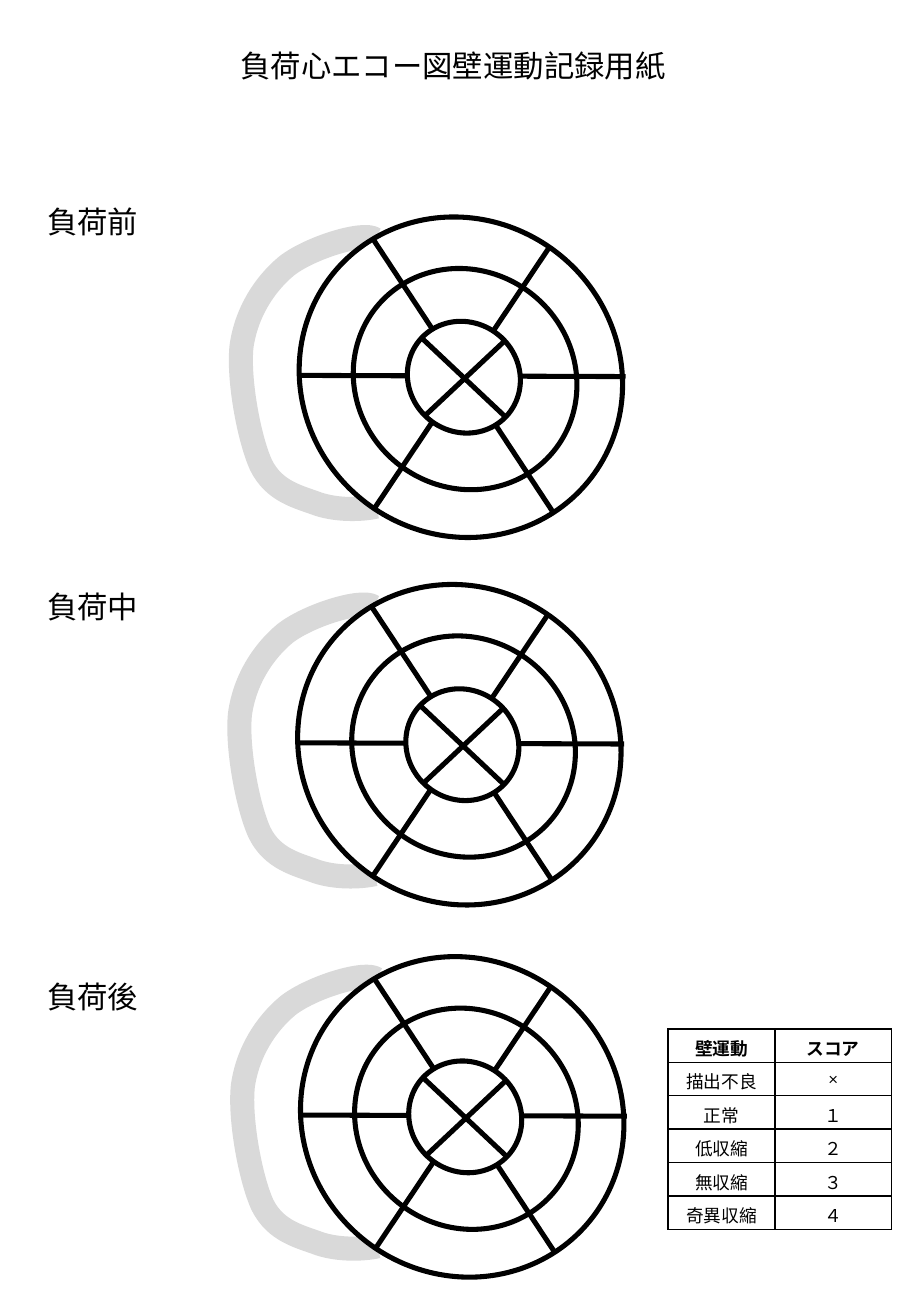
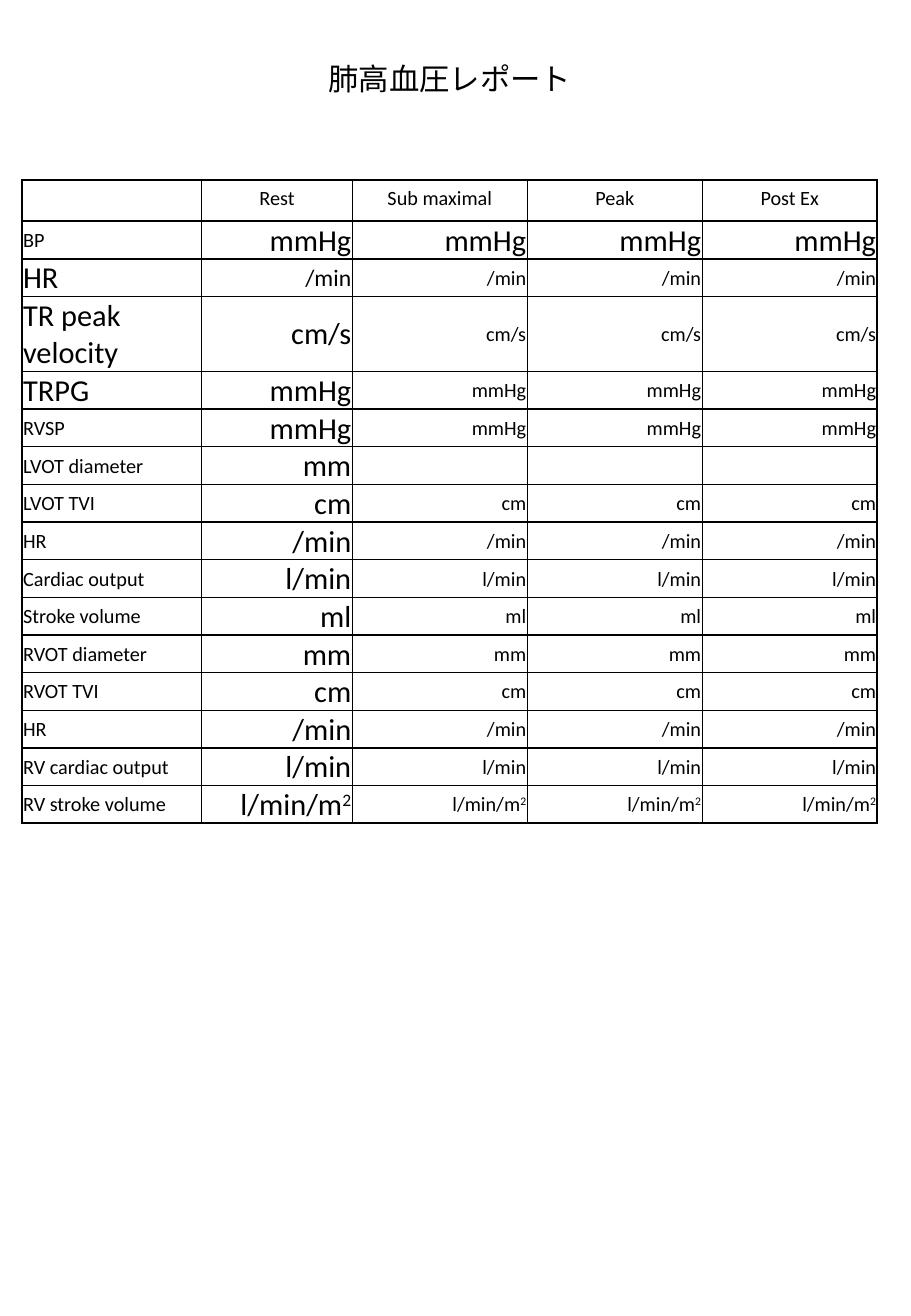
from dataclasses import dataclass

from pptx import Presentation
from pptx.dml.color import RGBColor
from pptx.enum.shapes import MSO_CONNECTOR, MSO_SHAPE
from pptx.enum.text import MSO_ANCHOR, MSO_AUTO_SIZE, PP_ALIGN
from pptx.oxml import parse_xml
from pptx.oxml.ns import nsdecls, qn
from pptx.oxml.xmlchemy import OxmlElement
from pptx.util import Pt


@dataclass(frozen=True)
class Theme:
    ink: RGBColor = RGBColor(0, 0, 0)
    paper: RGBColor = RGBColor(255, 255, 255)
    grey: RGBColor = RGBColor(0xD9, 0xD9, 0xD9)
    font: str = "Calibri"
    title_font: str = "Arial"
    title: float = 18
    large: float = 18
    medium: float = 14
    body: float = 12
    small: float = 10.5
    outline: float = 3
    band: float = 14.25


T = Theme()

# Heart section geometry, in points from its centre
TILT = 309.2
OUTER_RINGS = [(0, 0, 186.5, 195.1, T.paper), (2.5, 1.1, 128.2, 135.4, None)]
INNER_RING = (1.8, 0, 64.8, 68.4, T.paper)
SPOKES = [(-51.5, -81, 54.4, 79.6), (97.6, -0.4, -96.1, -1.1), (-51.5, 78.1, 52.2, -76.7)]
CROSS = [(-23.4, -23.4, 26.3, 23.4), (25.6, -21.2, -21.2, 22.7)]
# Start point, then two handles and an end point for each curve
RV_WALL = [
    (-50.8, -81.7),
    (-57.2, -86.8), (-89.6, -76.7), (-103.3, -65.9),
    (-116.3, -55.1), (-127.1, -38.5), (-130, -18.4),
    (-132.1, 1.1), (-125.6, 36.4), (-118.4, 52.2),
    (-110.5, 68), (-96.1, 70.9), (-84.6, 75.2),
    (-73.8, 78.8), (-59.4, 78.8), (-50, 76.7),
]

# Label, top and height of the label, centre of the section
STAGES = [
    ("負荷前", 116.6, 51.1, 273.2, 223.6),
    ("負荷中", 344.9, 28.8, 272.3, 441.4),
    ("負荷後", 576, 28.8, 274, 662),
]
SCORES = [("壁運動", "スコア"), ("描出不良", "×"), ("正常", "１"),
          ("低収縮", "２"), ("無収縮", "３"), ("奇異収縮", "４")]

REPORT_HEAD = ["", "Rest", "Sub maximal", "Peak", "Post Ex"]
# Label, unit, then sizes of the label, the rest value and the other values
REPORT = [
    ("BP", "mmHg", T.body, T.large, T.large),
    ("HR", "/min", T.large, T.medium, T.body),
    ("TR peak velocity", "cm/s", T.large, T.large, T.body),
    ("TRPG", "mmHg", T.large, T.large, T.body),
] + [(label, unit, T.body, T.large, T.body) for label, unit in [
    ("RVSP", "mmHg"), ("LVOT diameter", "mm"), ("LVOT TVI", "cm"), ("HR", "/min"),
    ("Cardiac output", "l/min"), ("Stroke volume", "ml"), ("RVOT diameter", "mm"),
    ("RVOT TVI", "cm"), ("HR", "/min"), ("RV cardiac output", "l/min"),
    ("RV stroke volume", "l/min/m"),
]]


def write(tf, text, size=T.body, font=T.font, bold=False, align=None, sup=""):
    """Put text in the first paragraph, with an optional superscript."""
    p = tf.paragraphs[0]
    p.alignment = align
    for part, raised in ((text, False), (sup, True)):
        if not part:
            continue
        r = p.add_run()
        r.text = part
        r.font.size, r.font.name, r.font.bold = Pt(size), font, bold
        r.font.color.rgb = T.ink
        if raised:
            r._r.get_or_add_rPr().set("baseline", "30000")


def add_label(slide, text, x, y, w, h=28.8, wrap=False, **style):
    tf = slide.shapes.add_textbox(Pt(x), Pt(y), Pt(w), Pt(h)).text_frame
    tf.word_wrap = wrap
    tf.auto_size = MSO_AUTO_SIZE.SHAPE_TO_FIT_TEXT
    write(tf, text, T.title, **style)


# Drawing
def add_ring(shapes, cx, cy, ring):
    dx, dy, w, h, fill = ring
    sp = shapes.add_shape(MSO_SHAPE.OVAL, Pt(cx + dx - w / 2), Pt(cy + dy - h / 2), Pt(w), Pt(h))
    sp.rotation = TILT
    sp.shadow.inherit = False
    if fill is None:
        sp.fill.background()
    else:
        sp.fill.solid()
        sp.fill.fore_color.rgb = fill
    sp.line.color.rgb, sp.line.width = T.ink, Pt(T.outline)


def add_spoke(shapes, cx, cy, ends):
    x1, y1, x2, y2 = ends
    line = shapes.add_connector(MSO_CONNECTOR.STRAIGHT, Pt(cx + x1), Pt(cy + y1),
                                Pt(cx + x2), Pt(cy + y2))
    line.line.color.rgb, line.line.width = T.ink, Pt(T.outline)
    line._element.spPr.append(OxmlElement("a:effectLst"))


def add_curve(shapes, cx, cy, points):
    """Draw an open curve: each three segments become one cubic."""
    start, *rest = [(Pt(cx + x), Pt(cy + y)) for x, y in points]
    builder = shapes.build_freeform(*start, scale=1.0)
    builder.add_line_segments(rest, close=False)
    sp = builder.convert_to_shape()
    segments = sp._element.xpath(".//a:lnTo")
    for i in range(0, len(segments), 3):
        cubic = OxmlElement("a:cubicBezTo")
        segments[i].addprevious(cubic)
        for segment in segments[i:i + 3]:
            cubic.append(segment[0])
            segment.getparent().remove(segment)
    sp.shadow.inherit = False
    sp.fill.background()
    sp.line.color.rgb, sp.line.width = T.grey, Pt(T.band)


def add_heart_section(slide, cx, cy):
    shapes = slide.shapes.add_group_shape().shapes
    add_curve(shapes, cx, cy, RV_WALL)
    for ring in OUTER_RINGS:
        add_ring(shapes, cx, cy, ring)
    for spoke in SPOKES:
        add_spoke(shapes, cx, cy, spoke)
    add_ring(shapes, cx, cy, INNER_RING)
    for spoke in CROSS:
        add_spoke(shapes, cx, cy, spoke)


# Tables
def add_grid(slide, x, y, widths, heights):
    """Add an empty table with thin ruled cells and no fill."""
    table = slide.shapes.add_table(len(heights), len(widths), Pt(x), Pt(y),
                                   Pt(sum(widths)), Pt(sum(heights))).table
    table.first_row = table.horz_banding = False
    for column, w in zip(table.columns, widths):
        column.width = Pt(w)
    for row, h in zip(table.rows, heights):
        row.height = Pt(h)
    for cell in table.iter_cells():
        tcPr = cell._tc.get_or_add_tcPr()
        for side in ("lnL", "lnR", "lnT", "lnB"):
            tcPr.append(parse_xml(
                f'<a:{side} {nsdecls("a")} w="{Pt(1)}"><a:solidFill>'
                f'<a:srgbClr val="{T.ink}"/></a:solidFill></a:{side}>'))
        cell.fill.background()
    return table


def fill_cell(cell, text, tight=False, anchor=MSO_ANCHOR.MIDDLE, **style):
    cell.vertical_anchor = anchor
    if tight:
        cell.margin_left = cell.margin_right = cell.margin_top = Pt(0.7)
        cell.margin_bottom = Pt(0)
    write(cell.text_frame, text, **style)


def add_scores(slide):
    table = add_grid(slide, 396, 609.8, [63.4, 69.1], [19.8] * len(SCORES))
    for i, row in enumerate(SCORES):
        for j, text in enumerate(row):
            fill_cell(table.cell(i, j), text, size=T.small, bold=i == 0, align=PP_ALIGN.CENTER)


def add_report(slide):
    heights = [24.5] + [44.5 if "velocity" in row[0] else 22.2 for row in REPORT]
    table = add_grid(slide, 13, 106.6, [106.6, 89.3] + [103.7] * 3, heights)
    for j, text in enumerate(REPORT_HEAD):
        fill_cell(table.cell(0, j), text, tight=not text, anchor=MSO_ANCHOR.TOP,
                  align=PP_ALIGN.CENTER)
    for i, (label, unit, label_size, rest_size, other_size) in enumerate(REPORT, 1):
        fill_cell(table.cell(i, 0), label, tight=True, size=label_size)
        for j in range(1, len(REPORT_HEAD)):
            # The LVOT diameter is measured at rest only
            text = "" if label == "LVOT diameter" and j > 1 else unit
            fill_cell(table.cell(i, j), text, tight=True, align=PP_ALIGN.RIGHT,
                      size=rest_size if j == 1 else other_size,
                      sup="2" if text.endswith("/m") else "")


def main():
    prs = Presentation()
    prs.slide_width, prs.slide_height = Pt(540), Pt(780)
    blank = prs.slide_layouts[6]

    # Wall motion sheet
    s = prs.slides.add_slide(blank)
    add_label(s, "負荷心エコー図壁運動記録用紙", 135.4, 24.5, 269.3)
    add_scores(s)
    for text, top, height, cx, cy in STAGES:
        add_label(s, text, 20.9, top, 69.1, height)
        add_heart_section(s, cx, cy)

    # Pulmonary hypertension report
    s = prs.slides.add_slide(blank)
    add_label(s, "肺高血圧レポート", 33.8, 32.4, 465.8, wrap=True,
              font=T.title_font, align=PP_ALIGN.CENTER)
    add_report(s)
    prs.save("out.pptx")


if __name__ == "__main__":
    main()
